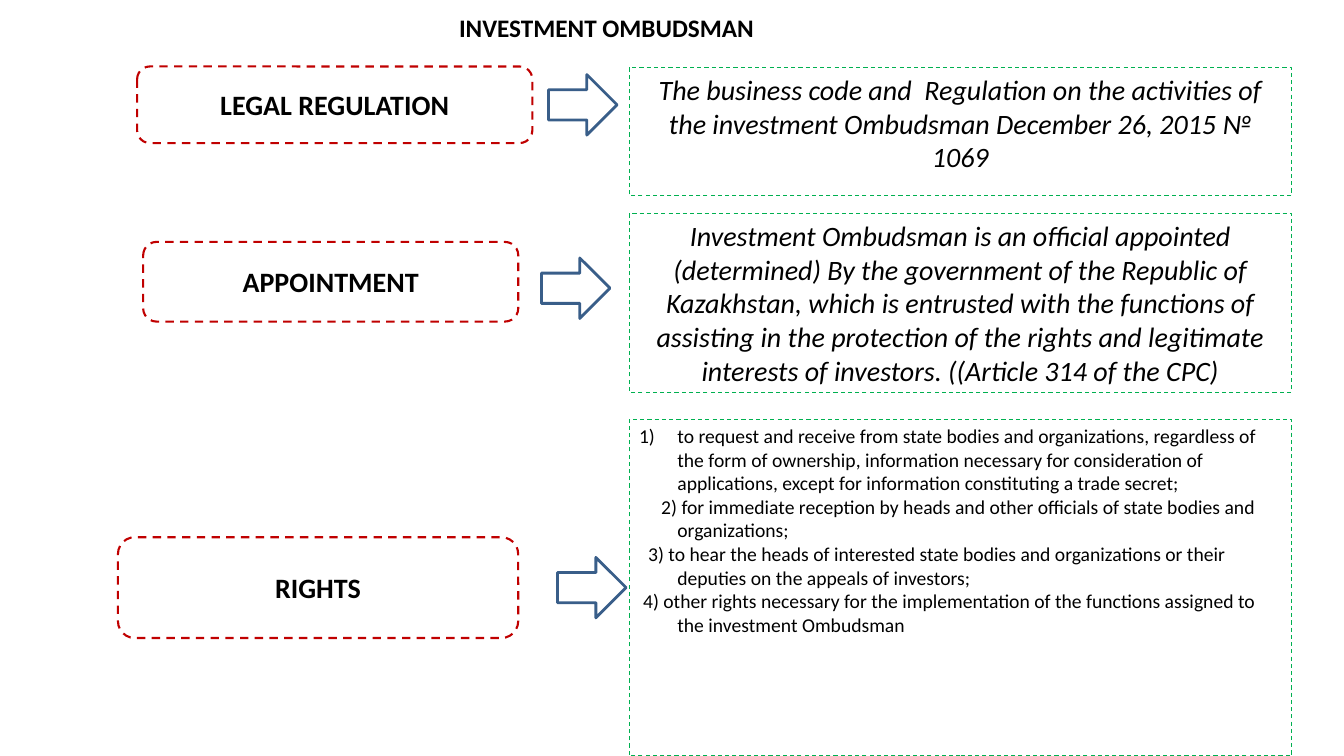
from dataclasses import dataclass
from typing import Optional

from lxml.etree import SubElement
from pptx import Presentation
from pptx.dml.color import RGBColor
from pptx.enum.dml import MSO_LINE
from pptx.enum.shapes import MSO_SHAPE
from pptx.enum.text import MSO_ANCHOR, PP_ALIGN
from pptx.oxml.ns import qn
from pptx.shapes.autoshape import Shape
from pptx.slide import Slide
from pptx.util import Inches, Pt


@dataclass(frozen=True)
class Theme:
    font: str = "Calibri"
    text: RGBColor = RGBColor(0x00, 0x00, 0x00)
    label_line: RGBColor = RGBColor(0xC0, 0x00, 0x00)
    detail_line: RGBColor = RGBColor(0x00, 0xB0, 0x50)
    arrow_line: RGBColor = RGBColor(0x39, 0x5E, 0x89)
    title_size: int = 18
    body_size: int = 20
    list_size: int = 14


@dataclass(frozen=True)
class Box:
    left: float
    top: float
    width: float
    height: float


@dataclass(frozen=True)
class Item:
    text: str
    first_line: float
    numbered: bool = False


@dataclass(frozen=True)
class Topic:
    label: str
    label_box: Box
    arrow_left: float
    arrow_top: float
    detail_top: float
    detail_height: float
    detail: str = ""
    items: tuple[Item, ...] = ()


THEME = Theme()
DETAIL_LEFT, DETAIL_WIDTH = 6.24, 6.57
ARROW_WIDTH, ARROW_HEIGHT = 0.68, 0.6
LIST_MARGIN = 0.38

RIGHTS = (
    Item("to request and receive from state bodies and organizations, regardless of the form of "
         "ownership, information necessary for consideration of applications, except for "
         "information constituting a trade secret;", 0, numbered=True),
    Item("2) for immediate reception by heads and other officials of state bodies and "
         "organizations;", 0.22),
    Item("3) to hear the heads of interested state bodies and organizations or their deputies "
         "on the appeals of investors;", 0.09),
    Item("4) other rights necessary for the implementation of the functions assigned to the "
         "investment Ombudsman", 0.04),
)

TOPICS = (
    Topic("LEGAL REGULATION", Box(1.36, 0.66, 3.92, 0.76), 5.44, 0.74, 0.67, 1.27,
          detail="The business code and  Regulation on the activities of the investment "
                 "Ombudsman December 26, 2015 № 1069"),
    Topic("APPOINTMENT", Box(1.42, 2.4, 3.72, 0.79), 5.37, 2.56, 2.12, 1.77,
          detail="Investment Ombudsman is an official appointed (determined) By the government "
                 "of the Republic of Kazakhstan, which is entrusted with the functions of "
                 "assisting in the protection of the rights and legitimate interests of "
                 "investors. ((Article 314 of the CPC)"),
    Topic("RIGHTS", Box(1.17, 5.33, 3.97, 1), 5.53, 5.53, 4.16, 3.34, items=RIGHTS),
)


def write(shape: Shape, *items: Item, size: int, bold: bool = False, italic: bool = False,
          align: PP_ALIGN = PP_ALIGN.CENTER, anchor: MSO_ANCHOR = MSO_ANCHOR.TOP,
          margin: Optional[float] = None, wrap: bool = True) -> None:
    """Fill a shape with one paragraph per item; margin sets the indent of wrapped lines."""
    frame = shape.text_frame
    frame.word_wrap = wrap
    frame.vertical_anchor = anchor
    for index, item in enumerate(items):
        paragraph = frame.add_paragraph() if index else frame.paragraphs[0]
        paragraph.alignment = align
        run = paragraph.add_run()
        run.text = item.text
        run.font.name = THEME.font
        run.font.size = Pt(size)
        run.font.bold = bold
        run.font.italic = italic
        run.font.color.rgb = THEME.text
        if margin is not None:
            properties = paragraph._p.get_or_add_pPr()
            properties.set("marL", str(Inches(margin)))
            properties.set("indent", str(Inches(item.first_line - margin)))
            if item.numbered:
                SubElement(properties, qn("a:buFont"), typeface=THEME.font)
                SubElement(properties, qn("a:buAutoNum"), type="arabicParenR")


def add_outline(slide: Slide, kind: MSO_SHAPE, box: Box, color: RGBColor, width: float,
                dash: Optional[MSO_LINE] = MSO_LINE.DASH) -> Shape:
    shape = slide.shapes.add_shape(kind, Inches(box.left), Inches(box.top),
                                   Inches(box.width), Inches(box.height))
    shape.shadow.inherit = False
    shape.fill.background()
    shape.line.color.rgb = color
    shape.line.width = Pt(width)
    shape.line.dash_style = dash
    return shape


def add_topic(slide: Slide, topic: Topic) -> None:
    label = add_outline(slide, MSO_SHAPE.ROUNDED_RECTANGLE, topic.label_box,
                        THEME.label_line, 1.5)
    write(label, Item(topic.label, 0), size=THEME.body_size, bold=True,
          anchor=MSO_ANCHOR.MIDDLE)

    arrow_box = Box(topic.arrow_left, topic.arrow_top, ARROW_WIDTH, ARROW_HEIGHT)
    add_outline(slide, MSO_SHAPE.RIGHT_ARROW, arrow_box, THEME.arrow_line, 2, dash=None)

    detail_box = Box(DETAIL_LEFT, topic.detail_top, DETAIL_WIDTH, topic.detail_height)
    detail = add_outline(slide, MSO_SHAPE.RECTANGLE, detail_box, THEME.detail_line, 0.75)
    if topic.items:
        write(detail, *topic.items, size=THEME.list_size, align=PP_ALIGN.LEFT,
              margin=LIST_MARGIN)
    else:
        write(detail, Item(topic.detail, 0), size=THEME.body_size, italic=True)


def main() -> None:
    presentation = Presentation()
    presentation.slide_width = Inches(13.33)
    presentation.slide_height = Inches(7.5)
    slide = presentation.slides.add_slide(presentation.slide_layouts[6])
    for topic in TOPICS:
        add_topic(slide, topic)
    title = slide.shapes.add_textbox(Inches(4.44), Inches(0.07), Inches(3.15), Inches(0.4))
    write(title, Item("INVESTMENT OMBUDSMAN", 0), size=THEME.title_size, bold=True, wrap=False)
    presentation.save("out.pptx")


if __name__ == "__main__":
    main()
